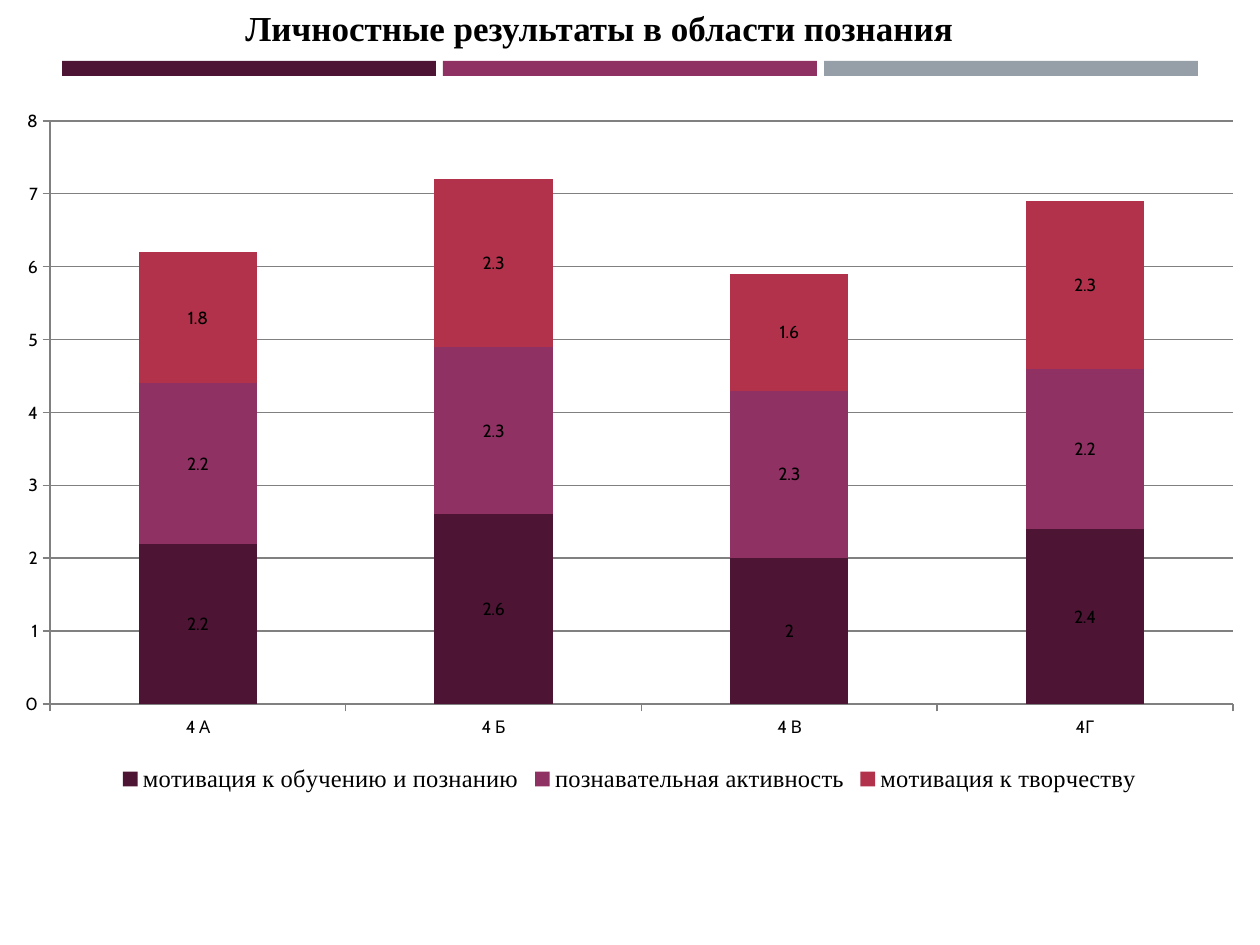
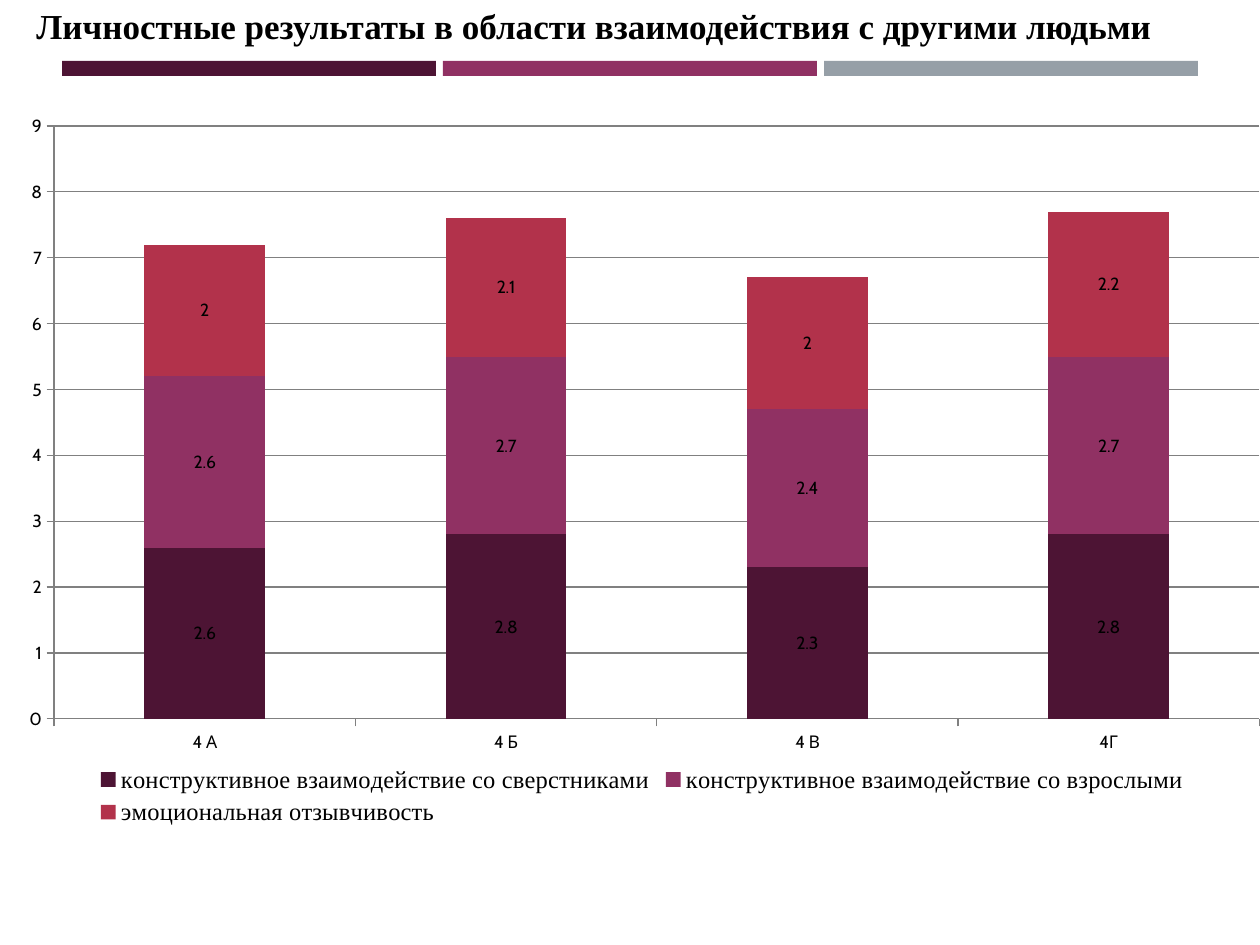
from dataclasses import dataclass

from lxml import etree
from pptx import Presentation
from pptx.chart.data import CategoryChartData
from pptx.dml.color import RGBColor
from pptx.enum.chart import XL_CHART_TYPE, XL_LEGEND_POSITION, XL_TICK_MARK
from pptx.enum.shapes import MSO_SHAPE
from pptx.enum.text import MSO_ANCHOR
from pptx.oxml.ns import qn
from pptx.util import Pt

CLASSES = ["4 А", "4 Б", "4 В", "4Г"]

# Boxes are (left, top, width, height) in px; "plot" is the area inside the axes.
SLIDES = [
    {
        "title": "Личностные результаты в области познания",
        "title_box": (233, 0, 1196, 55),
        "chart_box": (0, 96, 1259, 702),
        "plot": (50, 121, 1183, 583),
        "axis_max": 8,
        "series": [
            ("мотивация к обучению и познанию", (2.2, 2.6, 2, 2.4)),
            ("познавательная активность", (2.2, 2.3, 2.3, 2.2)),
            ("мотивация к творчеству", (1.8, 2.3, 1.6, 2.3)),
        ],
    },
    {
        "title": "Личностные результаты в области взаимодействия с другими людьми",
        "title_box": (24, -2, 1386, 55),
        "chart_box": (25, 106, 1235, 725),
        "plot": (54, 126, 1206, 593),
        "axis_max": 9,
        "series": [
            ("конструктивное взаимодействие со сверстниками", (2.6, 2.8, 2.3, 2.8)),
            ("конструктивное взаимодействие со взрослыми", (2.6, 2.7, 2.4, 2.7)),
            ("эмоциональная отзывчивость", (2, 2.1, 2, 2.2)),
        ],
    },
]


@dataclass(frozen=True)
class Theme:
    bands: tuple = ("4D1434", "903163", "969FA7")
    series: tuple = ("4D1434", "903163", "B2324B")
    text: str = "000000"
    grid: str = "808080"
    title_font: str = "Times New Roman"
    chart_font: str = "Cabin"
    title_size: int = 20
    legend_size: int = 14
    chart_size: int = 10


THEME = Theme()
PX_PER_INCH = 126
BAND_LEFT, BAND_TOP, BAND_WIDTH, BAND_HEIGHT, BAND_GAP = 62, 61, 374, 15, 7


def px(n):
    return round(n * 914400 / PX_PER_INCH)


def emu(box):
    return [px(n) for n in box]


def set_font(font, name, size, bold=False):
    font.name, font.size, font.bold = name, Pt(size), bold
    font.color.rgb = RGBColor.from_string(THEME.text)


def set_line(line):
    line.color.rgb = RGBColor.from_string(THEME.grid)
    line.width = Pt(0.75)


def add_bands(s):
    for i, color in enumerate(THEME.bands):
        left = BAND_LEFT + i * (BAND_WIDTH + BAND_GAP)
        sp = s.shapes.add_shape(MSO_SHAPE.RECTANGLE,
                                *emu((left, BAND_TOP, BAND_WIDTH, BAND_HEIGHT)))
        sp.shadow.inherit = False
        sp.fill.solid()
        sp.fill.fore_color.rgb = RGBColor.from_string(color)
        sp.line.fill.background()


def add_title(s, text, box):
    tf = s.shapes.add_textbox(*emu(box)).text_frame
    tf.word_wrap = True
    tf.vertical_anchor = MSO_ANCHOR.MIDDLE
    r = tf.paragraphs[0].add_run()
    r.text = text
    set_font(r.font, THEME.title_font, THEME.title_size, bold=True)


def set_plot_area(chart, plot, box):
    """Fix the inner plot area, as fractions of the chart box."""
    area = chart.element.find(".//" + qn("c:plotArea"))
    layout = area.find(qn("c:layout"))
    if layout is None:
        layout = etree.Element(qn("c:layout"))
        area.insert(0, layout)
    manual = etree.SubElement(layout, qn("c:manualLayout"))
    x, y, w, h = plot
    left, top, width, height = box
    parts = [("layoutTarget", "inner"), ("xMode", "edge"), ("yMode", "edge"),
             ("x", (x - left) / width), ("y", (y - top) / height),
             ("w", w / width), ("h", h / height)]
    for tag, val in parts:
        text = val if isinstance(val, str) else f"{val:.4f}"
        etree.SubElement(manual, qn("c:" + tag)).set("val", text)


def add_stacked_chart(s, series, box, plot_box, axis_max):
    data = CategoryChartData()
    data.categories = CLASSES
    for name, values in series:
        data.add_series(name, values)
    chart = s.shapes.add_chart(XL_CHART_TYPE.COLUMN_STACKED, *emu(box), data).chart
    chart.has_title = False
    set_font(chart.font, THEME.chart_font, THEME.chart_size)

    plot = chart.plots[0]
    plot.gap_width, plot.overlap = 150, 100
    plot.vary_by_categories = False
    for ser, color in zip(plot.series, THEME.series):
        ser.format.fill.solid()
        ser.format.fill.fore_color.rgb = RGBColor.from_string(color)
        ser.data_labels.show_value = True
        set_font(ser.data_labels.font, THEME.chart_font, THEME.chart_size)

    for axis in (chart.category_axis, chart.value_axis):
        axis.major_tick_mark = XL_TICK_MARK.OUTSIDE
        axis.minor_tick_mark = XL_TICK_MARK.NONE
        set_line(axis.format.line)
    axis = chart.value_axis
    axis.minimum_scale, axis.maximum_scale, axis.major_unit = 0, axis_max, 1
    axis.has_major_gridlines = True
    set_line(axis.major_gridlines.format.line)

    chart.has_legend = True
    chart.legend.position = XL_LEGEND_POSITION.BOTTOM
    chart.legend.include_in_layout = False
    set_font(chart.legend.font, THEME.title_font, THEME.legend_size)
    set_plot_area(chart, plot_box, box)


def main():
    prs = Presentation()
    prs.slide_width, prs.slide_height = px(1260), px(945)
    for item in SLIDES:
        s = prs.slides.add_slide(prs.slide_layouts[6])
        add_bands(s)
        add_title(s, item["title"], item["title_box"])
        add_stacked_chart(s, item["series"], item["chart_box"], item["plot"],
                          item["axis_max"])
    prs.save("out.pptx")


if __name__ == "__main__":
    main()
